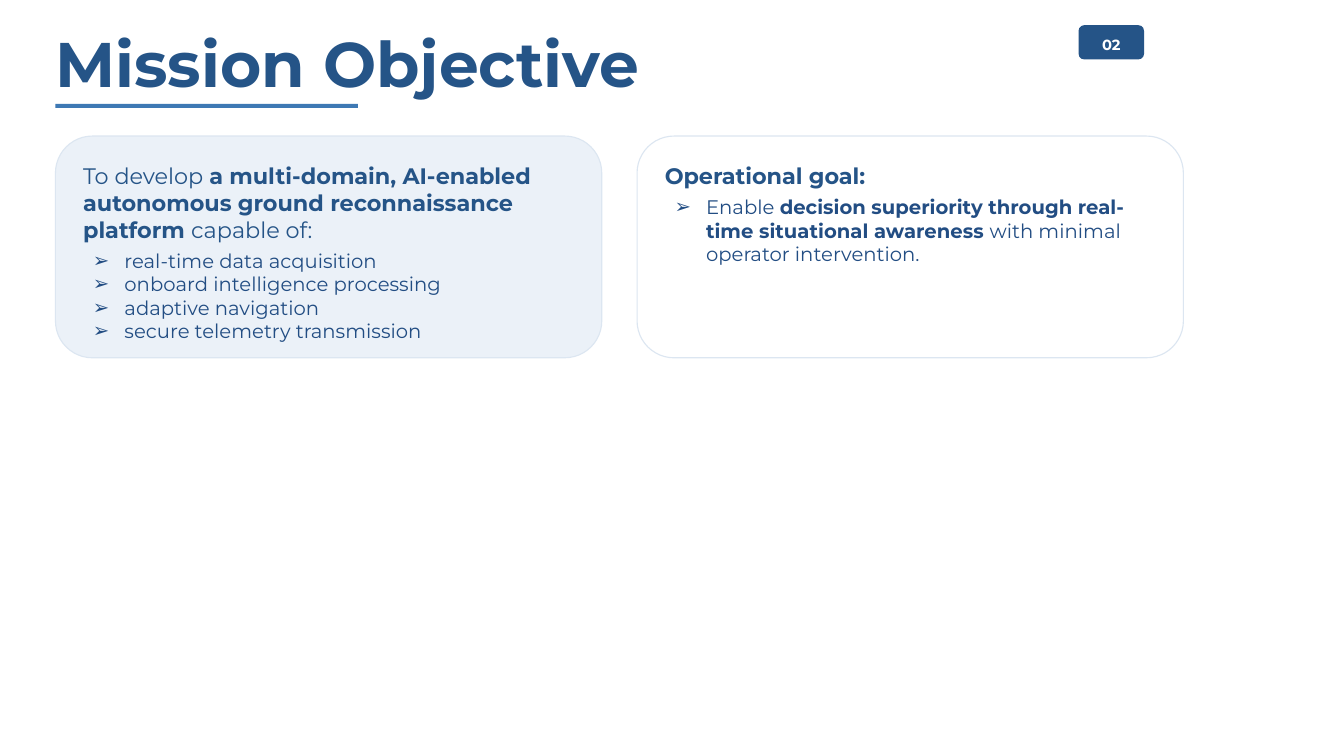
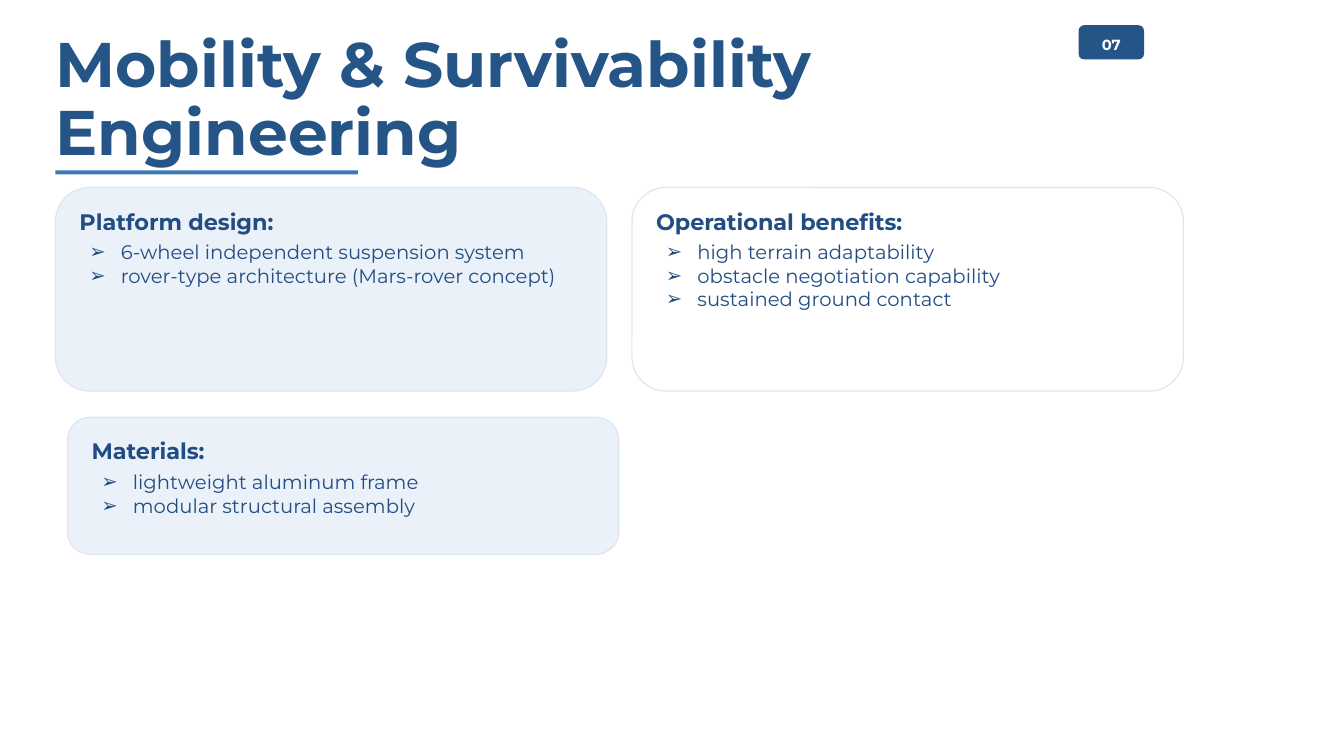
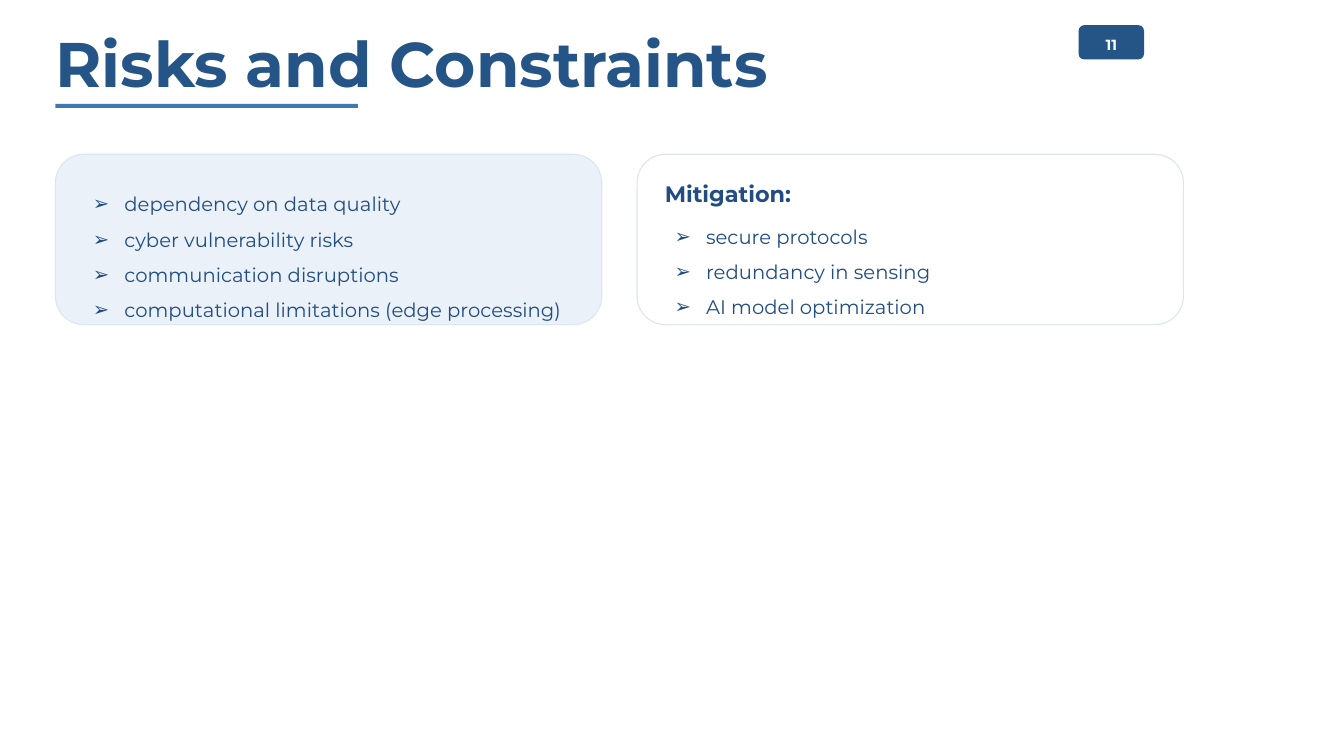
import pptx
import pptx.util
import pptx.dml.color
import pptx.enum.shapes
import pptx.enum.text
import lxml.etree
from pptx.oxml.ns import qn

Pt = pptx.util.Pt
RGBColor = pptx.dml.color.RGBColor
MSO_SHAPE = pptx.enum.shapes.MSO_SHAPE
MSO_ANCHOR = pptx.enum.text.MSO_ANCHOR
MSO_AUTO_SIZE = pptx.enum.text.MSO_AUTO_SIZE
PP_ALIGN = pptx.enum.text.PP_ALIGN

# Shared look
FONT = "Montserrat"
NAVY = RGBColor(0x25, 0x54, 0x87)
INK = RGBColor(0x22, 0x4D, 0x83)
RULE = RGBColor(0x3E, 0x79, 0xB4)
PALE = RGBColor(0xEB, 0xF1, 0xF8)
BORDER = RGBColor(0xDC, 0xE6, 0xF1)
WHITE = RGBColor(0xFF, 0xFF, 0xFF)

# Shared layout, in points
LEFT = 39.6
CONTENT_W = 805.7
INDENT, HANGING = 29.5, -22.5


def place(sp, left, top, width, height):
    sp.left, sp.top, sp.width, sp.height = Pt(left), Pt(top), Pt(width), Pt(height)


def format_frame(tf, insets, anchor=MSO_ANCHOR.TOP, auto_size=MSO_AUTO_SIZE.NONE):
    tf.margin_left, tf.margin_top, tf.margin_right, tf.margin_bottom = map(Pt, insets)
    tf.vertical_anchor = anchor
    tf.auto_size = auto_size
    tf.word_wrap = True


def set_bullet(p, char):
    """Give the paragraph a hanging bullet, or no bullet when char is None."""
    pPr = p._p.get_or_add_pPr()
    pPr.set("marL", str(Pt(INDENT if char else 0)))
    pPr.set("indent", str(Pt(HANGING if char else 0)))
    if char:
        lxml.etree.SubElement(pPr, qn("a:buChar")).set("char", char)
    else:
        lxml.etree.SubElement(pPr, qn("a:buNone"))


def write(p, text, size=14, color=INK, bold=False, align=PP_ALIGN.LEFT,
          line=1.0, after=0, bullet=None):
    """Fill a paragraph; parts between asterisks are bold."""
    set_bullet(p, bullet)
    p.alignment = align
    p.line_spacing = line
    p.space_before, p.space_after = Pt(0), Pt(after)
    for i, part in enumerate(text.split("*")):
        if part:
            r = p.add_run()
            r.text = part
            r.font.name = FONT
            r.font.size = Pt(size)
            r.font.color.rgb = color
            r.font.bold = bold or i % 2 == 1


def add_box(s, shape, left, top, width, height, fill, border=None):
    sp = s.shapes.add_shape(shape, Pt(left), Pt(top), Pt(width), Pt(height))
    sp.shadow.inherit = False
    sp.fill.solid()
    sp.fill.fore_color.rgb = fill
    if border is None:
        sp.line.fill.background()
    else:
        sp.line.color.rgb = border
        sp.line.width = Pt(0.8)
    return sp


def add_header(s, title, number, rule_top):
    # Title
    sp = s.shapes.title
    place(sp, LEFT, 20.2, 709.2, 46.8)
    format_frame(sp.text_frame, (0, 3.6, 0, 3.6))
    write(sp.text_frame.paragraphs[0], title, size=45, color=NAVY, bold=True, line=0.9)
    # Number badge
    badge = add_box(s, MSO_SHAPE.ROUNDED_RECTANGLE, 770.4, 18, 46.8, 24.5, NAVY)
    format_frame(badge.text_frame, (5.8, 5.8, 5.8, 2.9), MSO_ANCHOR.MIDDLE)
    write(badge.text_frame.paragraphs[0], number, size=10.5, color=WHITE, bold=True,
          align=PP_ALIGN.CENTER)
    # Title rule
    add_box(s, MSO_SHAPE.RECTANGLE, LEFT, rule_top, 216, 2.9, RULE)


def add_card(s, body, left, top, width, height, pad, text_h, items,
             heading=None, heading_color=INK, fill=PALE, line=1.0):
    """Draw a rounded card and lay the body placeholder over it."""
    add_box(s, MSO_SHAPE.ROUNDED_RECTANGLE, left, top, width, height, fill, BORDER)
    s.shapes._spTree.append(body._element)
    pad_x, pad_y = pad
    place(body, left + pad_x, top + pad_y, width - 2 * pad_x, text_h)
    tf = body.text_frame
    format_frame(tf, (8.6, 5.8, 8.6, 4.3), auto_size=MSO_AUTO_SIZE.SHAPE_TO_FIT_TEXT)
    p = tf.paragraphs[0]
    if heading:
        write(p, heading, size=16, color=heading_color, after=4)
        p = tf.add_paragraph()
    for i, item in enumerate(items):
        write(p if i == 0 else tf.add_paragraph(), item, line=line, bullet="➢")


def add_slide(prs, title, number, cards, top, height, gap=25.2, pad=(11.2, 13),
              rule_top=74.2):
    """Cards run in two columns; a card may override its left, top and height."""
    s = prs.slides.add_slide(prs.slide_layouts[3 if len(cards) == 2 else 4])
    add_header(s, title, number, rule_top)
    bodies = [ph for ph in s.placeholders if ph.placeholder_format.idx > 0]
    width = (CONTENT_W - gap) / 2
    for i, (body, card) in enumerate(zip(bodies, cards)):
        spot = dict(left=LEFT + i % 2 * (width + gap), top=top, width=width,
                    height=height, pad=pad, fill=WHITE if i % 2 else PALE)
        add_card(s, body, **{**spot, **card})
    for body in bodies[len(cards):]:
        body._element.getparent().remove(body._element)


def main():
    prs = pptx.Presentation()
    prs.slide_width, prs.slide_height = Pt(960), Pt(540)

    # Mission
    add_slide(prs, "Mission Objective", "02", [
        dict(heading="To develop *a multi-domain, AI-enabled autonomous ground "
                     "reconnaissance platform *capable of:",
             heading_color=NAVY, text_h=140.4,
             items=["real-time data acquisition", "onboard intelligence processing",
                    "adaptive navigation", "secure telemetry transmission"]),
        dict(heading="*Operational goal:*", heading_color=NAVY, text_h=84.2,
             items=["Enable *decision superiority through real-time situational "
                    "awareness *with minimal operator intervention."]),
    ], top=97.2, height=158.4)

    # Mobility
    add_slide(prs, "Mobility & Survivability Engineering", "07", [
        dict(heading="*Platform design:*", text_h=67.7,
             items=["6-wheel independent suspension system",
                    "rover-type architecture (Mars-rover concept)"]),
        dict(heading="*Operational benefits:*", text_h=84.2,
             items=["high terrain adaptability", "obstacle negotiation capability",
                    "sustained ground contact"]),
        dict(heading="*Materials:*", text_h=67.7, left=LEFT + 8.6, top=298.1, height=97.9,
             items=["lightweight aluminum frame", "modular structural assembly"]),
    ], top=133.9, height=145.4, gap=18, pad=(8.6, 8.6), rule_top=121.7)

    # Risks
    add_slide(prs, "Risks and Constraints", "11", [
        dict(text_h=108.7, line=1.5,
             items=["dependency on data quality", "cyber vulnerability risks",
                    "communication disruptions",
                    "computational limitations (edge processing)"]),
        dict(heading="*Mitigation:*", text_h=110.2, line=1.5,
             items=["secure protocols", "redundancy in sensing",
                    "AI model optimization"]),
    ], top=110.2, height=121.7)

    prs.save("out.pptx")


if __name__ == "__main__":
    main()
